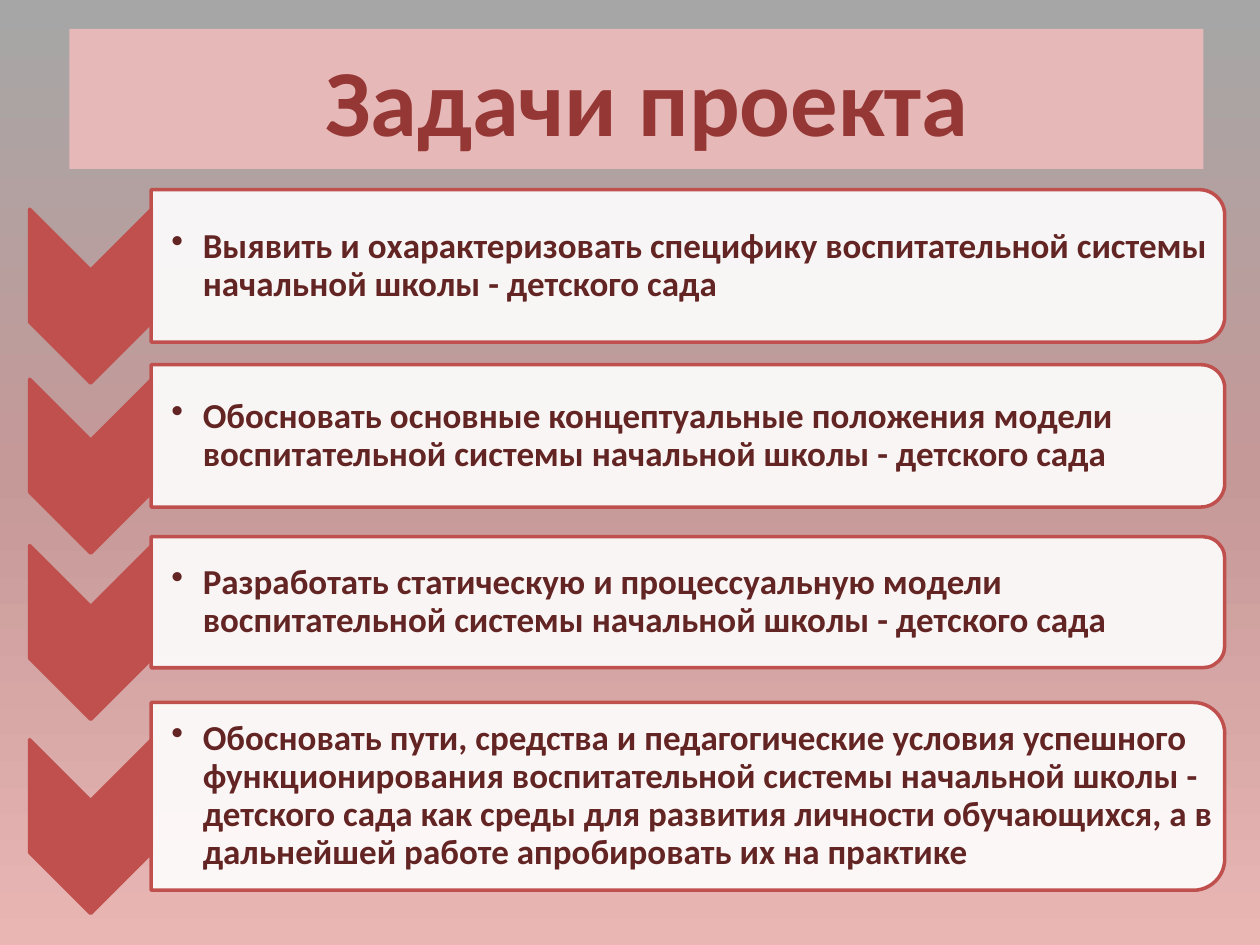
from dataclasses import dataclass

from lxml import etree
from pptx import Presentation
from pptx.dml.color import RGBColor
from pptx.enum.shapes import MSO_SHAPE
from pptx.enum.text import MSO_ANCHOR, MSO_AUTO_SIZE, PP_ALIGN
from pptx.oxml.ns import qn
from pptx.util import Inches, Pt

CHEVRON = MSO_SHAPE.CHEVRON
ROUNDED_TOP = MSO_SHAPE.ROUND_2_SAME_RECTANGLE
MIDDLE = MSO_ANCHOR.MIDDLE
CENTER = PP_ALIGN.CENTER
NO_AUTOFIT = MSO_AUTO_SIZE.NONE


@dataclass(frozen=True)
class Theme:
    font: str = "Calibri"
    title_size: int = 54
    task_size: int = 20
    title_text: str = "953735"
    title_band: str = "E6B9B8"
    task_text: str = "632523"
    accent: str = "C0504D"
    panel: str = "FFFFFF"
    panel_opacity: int = 90
    backdrop: tuple = ((0, "A6A6A6"), (50, "C59998"), (100, "E9B6B4"))


THEME = Theme()

# Panel centre, panel height and wording of each task
TASKS = [
    (2.11, 1.21, "Выявить и охарактеризовать специфику воспитательной системы "
                 "начальной школы - детского сада"),
    (3.46, 1.13, "Обосновать основные концептуальные положения модели "
                 "воспитательной системы начальной школы - детского сада"),
    (4.78, 1.04, "Разработать статическую и процессуальную модели "
                 "воспитательной системы начальной школы - детского сада"),
    (6.32, 1.49, "Обосновать пути, средства и педагогические условия успешного "
                 "функционирования воспитательной системы начальной школы - "
                 "детского сада как среды для развития личности обучающихся, "
                 "а в дальнейшей работе апробировать их на практике"),
]
PANEL_LEFT, PANEL_WIDTH = 1.2, 8.52
CHEVRON_CENTER, CHEVRON_LENGTH, CHEVRON_WIDTH = 0.72, 1.38, 0.97
CHEVRON_DROP = 0.24  # chevrons sit a little below their panels


def rgb(color):
    return RGBColor.from_string(color)


def paint_background(slide):
    fill = slide.background.fill
    fill.gradient()
    fill.gradient_angle = 270
    stops = slide.background._cSld.find(".//" + qn("a:gsLst"))
    for stop in list(stops):
        stops.remove(stop)
    for position, color in THEME.backdrop:
        stop = etree.SubElement(stops, qn("a:gs"), pos=str(position * 1000))
        etree.SubElement(stop, qn("a:srgbClr"), val=color)


def add_run(paragraph, text, size, color):
    run = paragraph.add_run()
    run.text = text
    run.font.name = THEME.font
    run.font.size = Pt(size)
    run.font.bold = True
    run.font.color.rgb = rgb(color)


def fill_title(title, text):
    title.left, title.top = Inches(0.55), Inches(0.23)
    title.width, title.height = Inches(9), Inches(1.11)
    title.fill.solid()
    title.fill.fore_color.rgb = rgb(THEME.title_band)
    frame = title.text_frame
    frame.auto_size = NO_AUTOFIT
    frame.vertical_anchor = MIDDLE
    frame.paragraphs[0].alignment = CENTER
    add_run(frame.paragraphs[0], text, THEME.title_size, THEME.title_text)


def add_turned_shape(diagram, kind, center_x, center_y, length, breadth, color):
    """Add an outlined shape turned a quarter clockwise about its centre."""
    shape = diagram.shapes.add_shape(
        kind, Inches(center_x - length / 2), Inches(center_y - breadth / 2),
        Inches(length), Inches(breadth))
    shape.rotation = 90
    shape.shadow.inherit = False
    shape.fill.solid()
    shape.fill.fore_color.rgb = rgb(color)
    shape.line.color.rgb = rgb(THEME.accent)
    shape.line.width = Pt(2)
    return shape


def add_panel(diagram, center_y, height):
    panel = add_turned_shape(diagram, ROUNDED_TOP, PANEL_LEFT + PANEL_WIDTH / 2,
                             center_y, height, PANEL_WIDTH, THEME.panel)
    color = panel.fill._xPr.find(qn("a:solidFill"))[0]
    etree.SubElement(color, qn("a:alpha"), val=str(THEME.panel_opacity * 1000))


def add_bullet(paragraph):
    properties = paragraph._p.get_or_add_pPr()
    properties.set("marL", str(Inches(0.25)))
    properties.set("indent", str(-Inches(0.25)))
    etree.SubElement(properties, qn("a:buChar"), char="•")


def add_task_text(diagram, center_y, panel_height, text):
    height = panel_height - 0.11
    box = diagram.shapes.add_textbox(
        Inches(PANEL_LEFT), Inches(center_y - height / 2),
        Inches(PANEL_WIDTH - 0.06), Inches(height))
    frame = box.text_frame
    frame.word_wrap = True
    frame.vertical_anchor = MIDDLE
    frame.margin_left = Inches(0.16)
    frame.margin_top = frame.margin_right = frame.margin_bottom = Inches(0.01)
    paragraph = frame.paragraphs[0]
    paragraph.level = 1
    paragraph.line_spacing = 0.9
    paragraph.space_after = Pt(3)
    add_bullet(paragraph)
    add_run(paragraph, text, THEME.task_size, THEME.task_text)


def main():
    deck = Presentation()
    deck.slide_width, deck.slide_height = Inches(10), Inches(7.5)
    slide = deck.slides.add_slide(deck.slide_layouts[5])

    # Background and heading
    paint_background(slide)
    fill_title(slide.shapes.title, " Задачи проекта")

    # Chevron list of tasks
    diagram = slide.shapes.add_group_shape()
    for center_y, height, text in TASKS:
        add_turned_shape(diagram, CHEVRON, CHEVRON_CENTER, center_y + CHEVRON_DROP,
                         CHEVRON_LENGTH, CHEVRON_WIDTH, THEME.accent)
        add_panel(diagram, center_y, height)
        add_task_text(diagram, center_y, height, text)

    deck.save("out.pptx")


if __name__ == "__main__":
    main()
